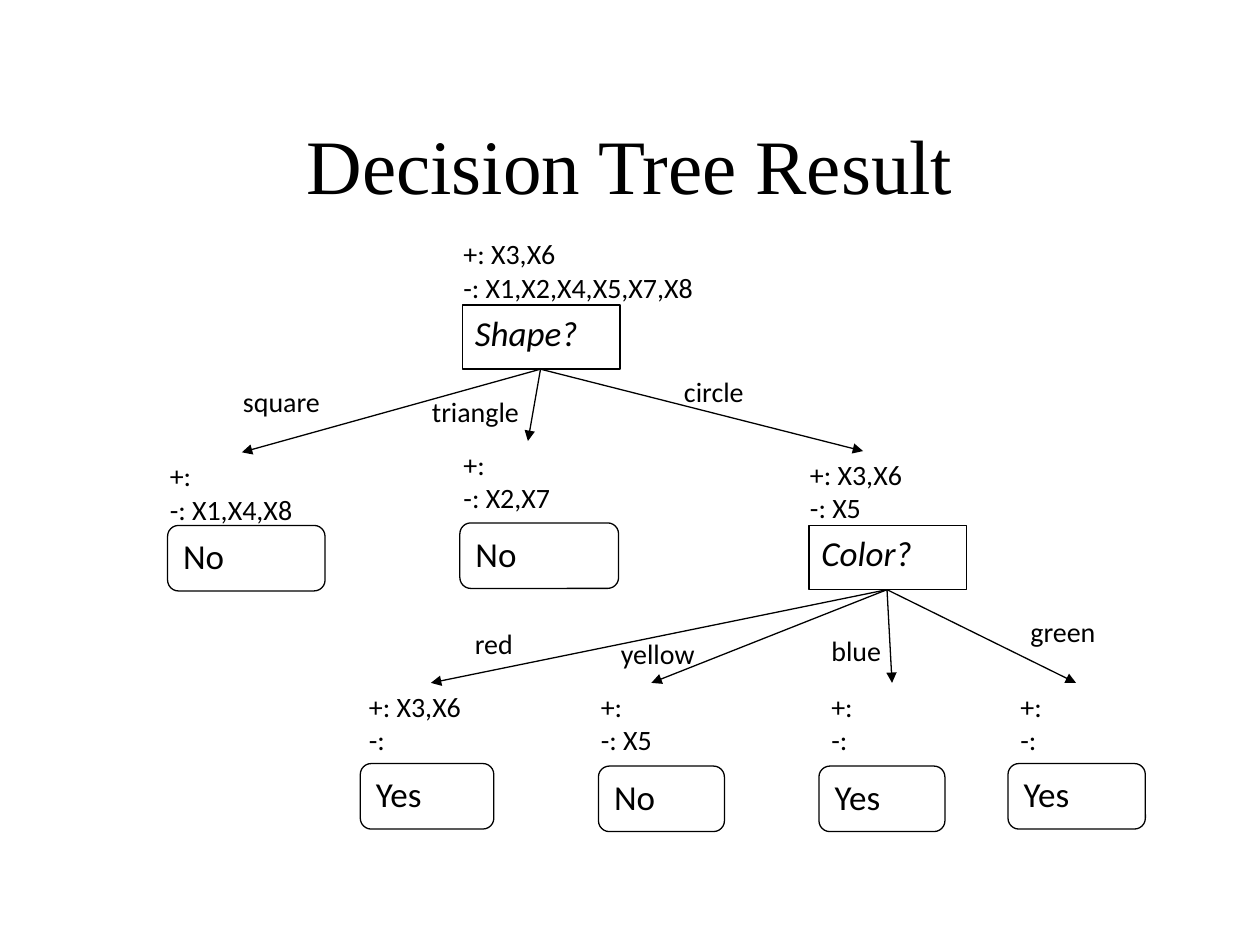
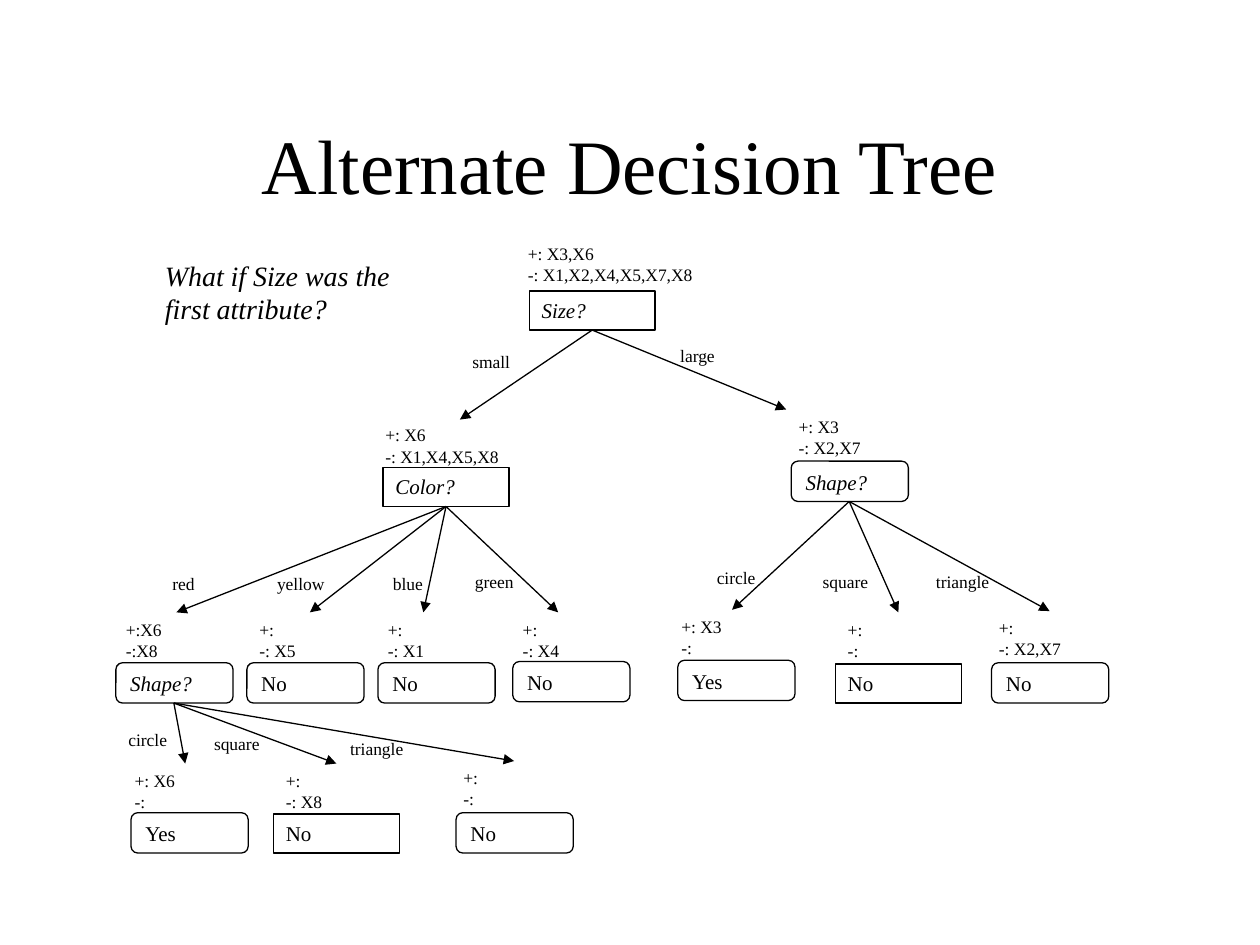
from collections import namedtuple
from lxml.etree import SubElement
from pptx import Presentation
from pptx.dml.color import RGBColor
from pptx.enum.shapes import MSO_CONNECTOR, MSO_SHAPE
from pptx.enum.text import MSO_ANCHOR, PP_ALIGN
from pptx.oxml.ns import qn
from pptx.util import Emu, Pt

PX = 9144  # 100 px to the inch
INK, PAPER = "000000", "FFFFFF"
SERIF = "Times New Roman"

Style = namedtuple("Style", "font big small gap rect note label")
WIDE = Style("Calibri", 20, 16, 10, 51, 74, 44)
DENSE = Style(SERIF, 12, 10, 0, 31, 46, 27)

# box and note: left, top, width; twigs: the branches that leave the node
Node = namedtuple("Node", "name kind box plus minus note twigs", defaults=[()])
# at: left, top, width of the label; tip: the arrow's end
Twig = namedtuple("Twig", "label at tip node")
RECT, ROUND = MSO_SHAPE.RECTANGLE, MSO_SHAPE.ROUNDED_RECTANGLE

SHAPE_TREE = Node(
    "Shape?", RECT, (367, 242, 125), "+: X3,X6", "-: X1,X2,X4,X5,X7,X8", (358, 183, 283), [
        Twig("square", (183, 300, 129), (192, 359), Node(
            "No", ROUND, (133, 417, 125), "+:", "-: X1,X4,X8", (125, 359, 133))),
        Twig("triangle", (333, 308, 129), (419, 350), Node(
            "No", ROUND, (365, 415, 126), "+:", "-: X2,X7", (358, 350, 121))),
        Twig("circle", (533, 292, 129), (685, 358), Node(
            "Color?", RECT, (642, 417, 125), "+: X3,X6", "-: X5", (633, 358, 102), [
                Twig("red", (367, 492, 65), (342, 542), Node(
                    "Yes", ROUND, (286, 606, 106), "+: X3,X6", "-:", (283, 542, 117))),
                Twig("yellow", (483, 500, 100), (517, 542), Node(
                    "No", ROUND, (475, 608, 100), "+:", "-: X5", (467, 542, 100))),
                Twig("blue", (650, 498, 75), (708, 542), Node(
                    "Yes", ROUND, (650, 608, 100), "+:", "-:", (650, 542, 117))),
                Twig("green", (808, 483, 92), (854, 542), Node(
                    "Yes", ROUND, (800, 606, 109), "+:", "-:", (800, 542, 108))),
            ])),
    ])

RED_NODE = Node(
    "Shape?", ROUND, (92, 526, 93), "+:X6", "-:X8", (90, 486, 100), [
        Twig("circle", (92, 574, 65), (147, 606), Node(
            "Yes", ROUND, (104, 645, 93), "+: X6", "-:", (97, 606, 100))),
        Twig("square", (160, 577, 65), (267, 606), Node(
            "No", RECT, (217, 646, 100), "+:", "-: X8", (217, 606, 100))),
        Twig("triangle", (268, 581, 65), (408, 604), Node(
            "No", ROUND, (362, 645, 93), "+:", "-:", (358, 604, 100))),
    ])

SMALL_NODE = Node(
    "Color?", RECT, (304, 371, 100), "+: X6", "-: X1,X4,X5,X8", (296, 332, 138), [
        Twig("red", (127, 450, 65), (140, 486), RED_NODE),
        Twig("yellow", (210, 450, 65), (246, 486), Node(
            "No", ROUND, (196, 526, 93), "+:", "-: X5", (196, 486, 100))),
        Twig("blue", (302, 450, 44), (336, 486), Node(
            "No", ROUND, (300, 526, 93), "+:", "-: X1", (298, 486, 75))),
        Twig("green", (367, 448, 58), (443, 486), Node(
            "No", ROUND, (407, 525, 93), "+:", "-: X4", (405, 486, 75))),
    ])

LARGE_NODE = Node(
    "Shape?", ROUND, (628, 366, 93), "+: X3", "-: X2,X7", (624, 325, 100), [
        Twig("circle", (559, 445, 65), (581, 484), Node(
            "Yes", ROUND, (538, 524, 93), "+: X3", "-:", (531, 484, 100))),
        Twig("square", (643, 448, 65), (713, 486), Node(
            "No", RECT, (663, 527, 100), "+:", "-:", (663, 486, 100))),
        Twig("triangle", (733, 448, 65), (833, 485), Node(
            "No", ROUND, (787, 526, 93), "+:", "-: X2,X7", (783, 485, 100))),
    ])

SIZE_TREE = Node(
    "Size?", RECT, (420, 231, 100), "+: X3,X6", "-: X1,X2,X4,X5,X7,X8", (409, 188, 165), [
        Twig("small", (365, 274, 65), (365, 333), SMALL_NODE),
        Twig("large", (530, 269, 65), (624, 325), LARGE_NODE),
    ])


def px(*sizes):
    return [Emu(size * PX) for size in sizes]


def tint(code):
    return RGBColor.from_string(code)


def write(shape, text, font, size, italic=False, align=PP_ALIGN.LEFT, gap=0):
    frame = shape.text_frame
    frame.word_wrap = True
    frame.text = text
    for para in frame.paragraphs:
        para.alignment = align
        for run in para.runs:
            run.font.name = font
            run.font.size = Pt(size)
            run.font.italic = italic
            run.font.color.rgb = tint(INK)
    frame.paragraphs[-1].space_after = Pt(gap)
    return frame


def add_text(slide, box, text, font, size, **look):
    return write(slide.shapes.add_textbox(*px(*box)), text, font, size, **look)


def add_box(slide, style, node, high):
    shape = slide.shapes.add_shape(node.kind, *px(*node.box, high))
    shape.shadow.inherit = False
    shape.fill.solid()
    shape.fill.fore_color.rgb = tint(PAPER)
    shape.line.color.rgb = tint(INK)
    shape.line.width = Pt(0.75)
    frame = write(shape, node.name, style.font, style.big,
                  italic=node.name.endswith("?"), gap=style.gap)
    frame.vertical_anchor = MSO_ANCHOR.TOP


def add_arrow(slide, start, tip):
    line = slide.shapes.add_connector(MSO_CONNECTOR.STRAIGHT, *px(*start, *tip))
    line.line.color.rgb = tint(INK)
    line.line.width = Pt(0.75)
    SubElement(line.line._get_or_add_ln(), qn("a:tailEnd"), type="triangle")
    SubElement(line._element.spPr, qn("a:effectLst"))


def add_tree(slide, style, node):
    """Draw a node with its examples, then each branch below it."""
    high = style.rect + (node.kind == ROUND)
    add_box(slide, style, node, high)
    add_text(slide, (*node.note, style.note), f"{node.plus}\n{node.minus}",
             style.font, style.small, gap=style.gap)
    left, top, width = node.box
    start = left + width // 2, top + high
    for twig in node.twigs:
        add_arrow(slide, start, twig.tip)
        add_text(slide, (*twig.at, style.label), twig.label,
                 style.font, style.small, gap=style.gap)
        add_tree(slide, style, twig.node)


def add_slide(deck, title):
    slide = deck.slides.add_slide(deck.slide_layouts[6])
    frame = add_text(slide, (75, 67, 850, 125), title, SERIF, 44, align=PP_ALIGN.CENTER)
    frame.vertical_anchor = MSO_ANCHOR.MIDDLE
    return slide


def main():
    deck = Presentation()
    deck.slide_width, deck.slide_height = px(1000, 750)

    slide = add_slide(deck, "Decision Tree Result")
    add_tree(slide, WIDE, SHAPE_TREE)

    slide = add_slide(deck, "Alternate Decision Tree")
    add_tree(slide, DENSE, SIZE_TREE)
    add_text(slide, (121, 200, 199, 64), "What if Size was the first attribute?",
             SERIF, 16, italic=True)

    deck.save("out.pptx")


if __name__ == "__main__":
    main()
